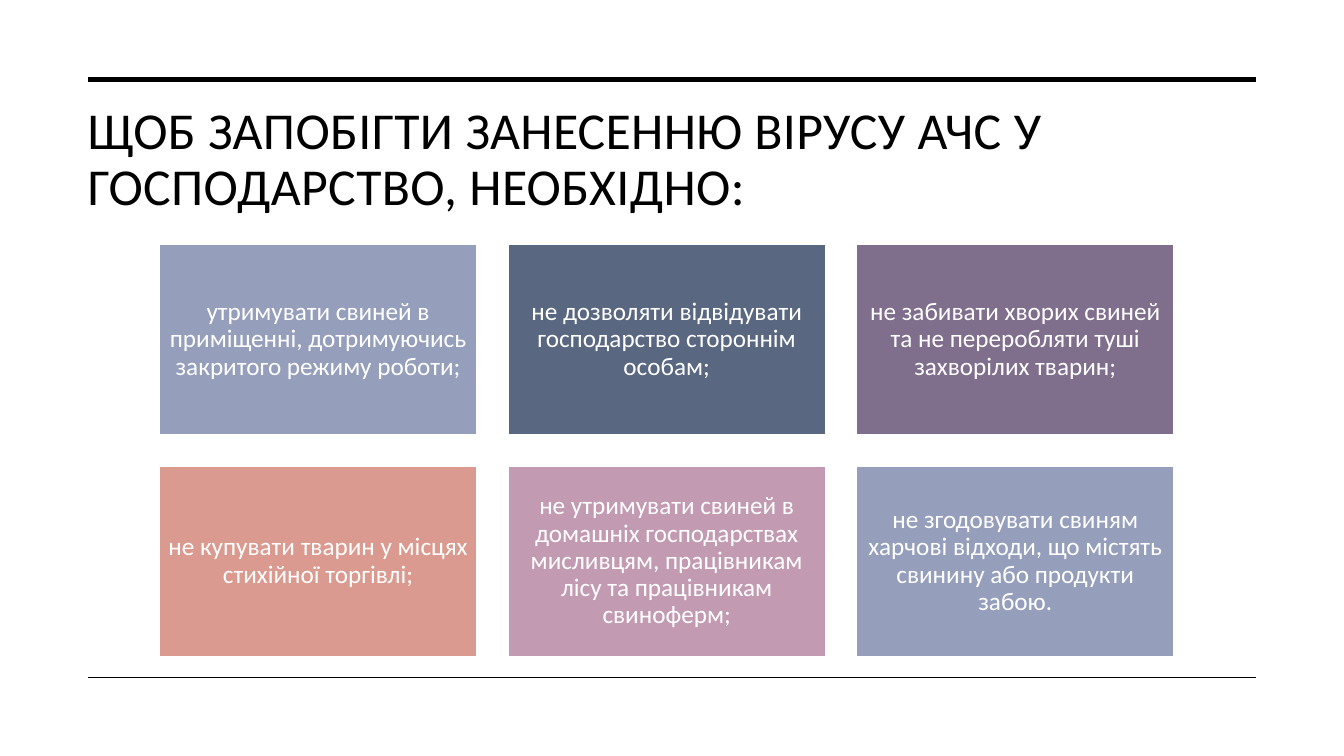
import dataclasses
import typing

import pptx
import pptx.dml.color
import pptx.enum.shapes
import pptx.enum.text
import pptx.oxml.ns
import pptx.util
import lxml.etree

EMU_PER_PX = 9525
ANCHOR = pptx.enum.text.MSO_ANCHOR
ALIGN = pptx.enum.text.PP_ALIGN


@dataclasses.dataclass(frozen=True)
class Theme:
    font: str = "Calibri"
    black: str = "000000"
    white: str = "FFFFFF"
    periwinkle: str = "959EBB"
    slate: str = "596781"
    plum: str = "7F6E8C"
    coral: str = "DB9A8F"
    mauve: str = "C29AB1"
    title_size: int = 37
    card_size: int = 18


@dataclasses.dataclass(frozen=True)
class Rule:
    y: int
    width: float


@dataclasses.dataclass(frozen=True)
class Card:
    text: str
    fill: str


THEME = Theme()

RULES = [Rule(76, 3.5), Rule(645, 1)]
RULE_LEFT, RULE_RIGHT = 84, 1196

TITLE = "ЩОБ ЗАПОБІГТИ ЗАНЕСЕННЮ ВІРУСУ АЧС У ГОСПОДАРСТВО, НЕОБХІДНО:"

CARDS = [
    Card("утримувати свиней в приміщенні, дотримуючись закритого режиму роботи;", THEME.periwinkle),
    Card("не дозволяти відвідувати господарство стороннім особам;", THEME.slate),
    Card("не забивати хворих свиней та не переробляти туші захворілих тварин;", THEME.plum),
    Card("не купувати тварин у місцях стихійної торгівлі;", THEME.coral),
    Card("не утримувати свиней в домашніх господарствах мисливцям, працівникам лісу "
         "та працівникам свиноферм;", THEME.mauve),
    Card("не згодовувати свиням харчові відходи, що містять свинину або продукти забою.",
         THEME.periwinkle),
]
COLUMNS = 3
GRID_LEFT, GRID_TOP = 152, 233
CARD_W, CARD_H, GAP = 302, 181, 30
CARD_INSET = 7


def px(n: int) -> pptx.util.Emu:
    return pptx.util.Emu(n * EMU_PER_PX)


def rgb(value: str) -> pptx.dml.color.RGBColor:
    return pptx.dml.color.RGBColor.from_string(value)


def apply(target: typing.Any, values: dict[str, typing.Any]) -> None:
    for name, value in values.items():
        setattr(target, name, value)


def write(tf: typing.Any, text: str, size: int, color: str,
          frame: dict[str, typing.Any], para: dict[str, typing.Any]) -> typing.Any:
    """Fill a text frame with one formatted paragraph and return its run."""
    apply(tf, {"word_wrap": True, **frame})
    p = tf.paragraphs[0]
    apply(p, {"line_spacing": 0.9, **para})
    r = p.add_run()
    r.text = text
    apply(r.font, {"name": THEME.font, "size": pptx.util.Pt(size)})
    r.font.color.rgb = rgb(color)
    return r


def add_rule(s: typing.Any, rule: Rule) -> None:
    line = s.shapes.add_connector(pptx.enum.shapes.MSO_CONNECTOR.STRAIGHT,
                                  px(RULE_LEFT), px(rule.y), px(RULE_RIGHT), px(rule.y))
    line.line.color.rgb = rgb(THEME.black)
    line.line.width = pptx.util.Pt(rule.width)
    lxml.etree.SubElement(line._element.spPr, pptx.oxml.ns.qn("a:effectLst"))


def add_title(s: typing.Any) -> None:
    sp = s.shapes.add_textbox(px(74), px(95), px(1122), px(121))
    r = write(sp.text_frame, TITLE, THEME.title_size, THEME.black,
              {"vertical_anchor": ANCHOR.TOP}, {"alignment": ALIGN.LEFT})
    r.font._element.set("spc", "30")


def add_card(s: typing.Any, index: int, card: Card) -> None:
    row, col = divmod(index, COLUMNS)
    sp = s.shapes.add_shape(pptx.enum.shapes.MSO_SHAPE.RECTANGLE,
                            px(GRID_LEFT + col * (CARD_W + GAP)),
                            px(GRID_TOP + row * (CARD_H + GAP)), px(CARD_W), px(CARD_H))
    sp.shadow.inherit = False
    sp.fill.solid()
    sp.fill.fore_color.rgb = rgb(card.fill)
    sp.line.color.rgb = rgb(THEME.white)
    sp.line.width = pptx.util.Pt(1)
    margins = {f"margin_{side}": px(CARD_INSET) for side in ("left", "top", "right", "bottom")}
    write(sp.text_frame, card.text, THEME.card_size, THEME.white,
          {"vertical_anchor": ANCHOR.MIDDLE, **margins},
          {"alignment": ALIGN.CENTER, "space_after": pptx.util.Pt(6.3)})


def main() -> None:
    prs = pptx.Presentation()
    apply(prs, {"slide_width": px(1280), "slide_height": px(720)})
    s = prs.slides.add_slide(prs.slide_layouts[6])

    # Rules above and below the content
    for rule in RULES:
        add_rule(s, rule)

    # Heading
    add_title(s)

    # Grid of measures
    for index, card in enumerate(CARDS):
        add_card(s, index, card)

    prs.save("out.pptx")


if __name__ == "__main__":
    main()
